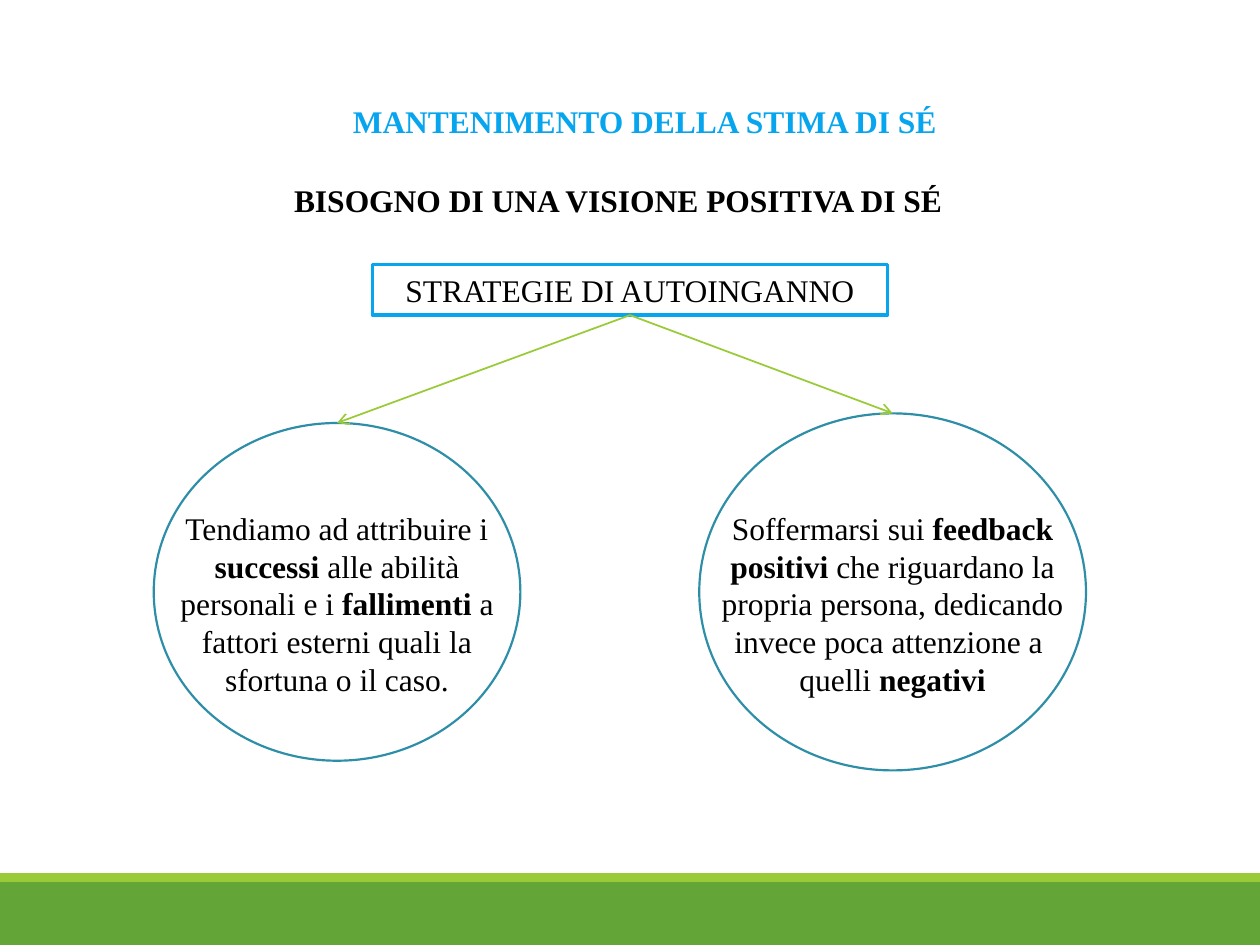
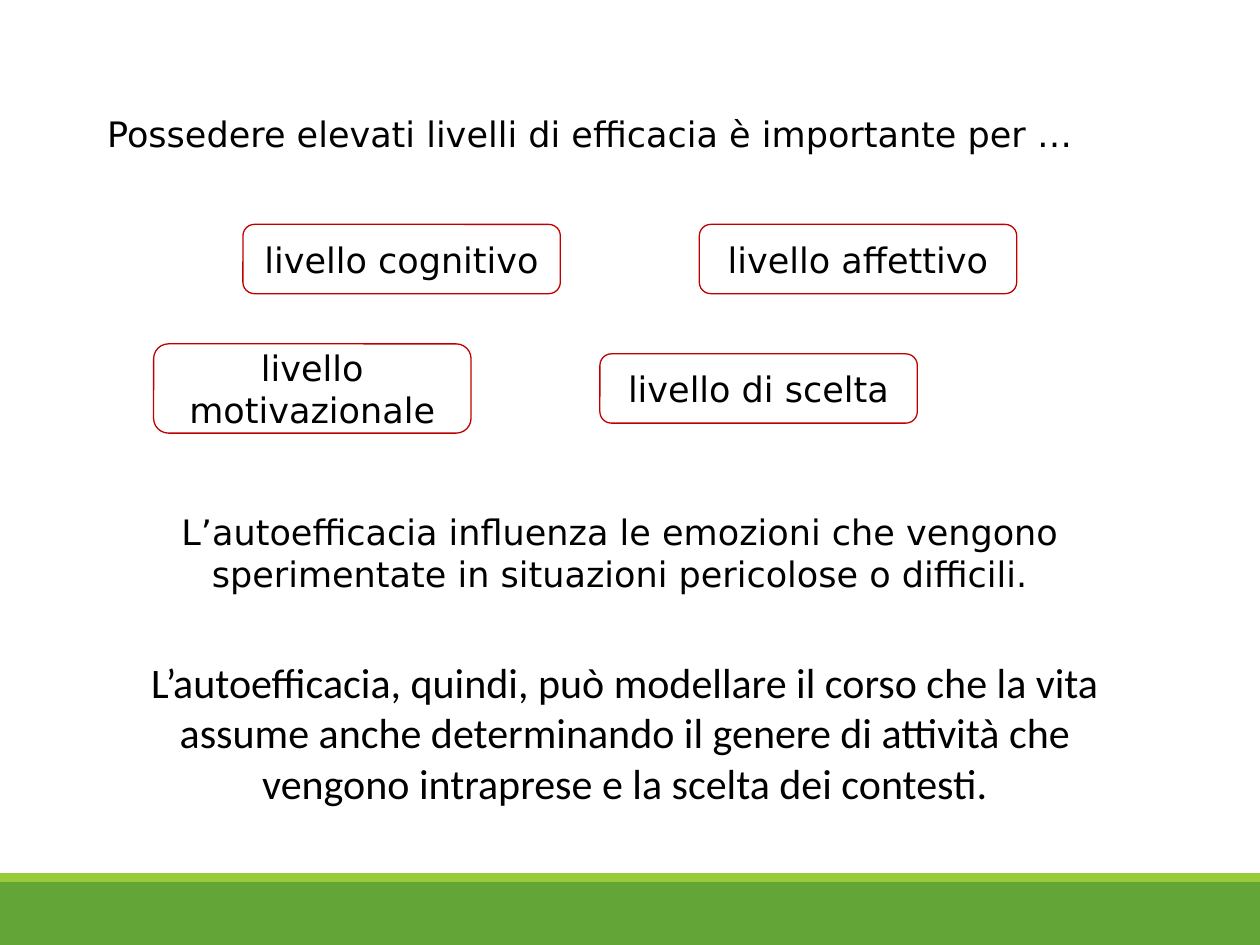
from collections import namedtuple

from lxml import etree
from pptx import Presentation
from pptx.dml.color import RGBColor
from pptx.enum.shapes import MSO_CONNECTOR, MSO_SHAPE
from pptx.enum.text import MSO_ANCHOR, MSO_AUTO_SIZE, PP_ALIGN
from pptx.oxml.ns import qn
from pptx.util import Pt

RECTANGLE, ROUNDED, OVAL = MSO_SHAPE.RECTANGLE, MSO_SHAPE.ROUNDED_RECTANGLE, MSO_SHAPE.OVAL
STRAIGHT = MSO_CONNECTOR.STRAIGHT
LEFT, CENTER = PP_ALIGN.LEFT, PP_ALIGN.CENTER
TOP, MIDDLE = MSO_ANCHOR.TOP, MSO_ANCHOR.MIDDLE
NO_AUTOFIT = MSO_AUTO_SIZE.NONE
BOTTOM_SITE, TOP_SITE = 2, 0

BLACK = RGBColor(0x00, 0x00, 0x00)
SKY = RGBColor(0x08, 0xA5, 0xEF)
TEAL = RGBColor(0x2E, 0x8E, 0xA8)
RED = RGBColor(0xC0, 0x00, 0x00)
GREEN = RGBColor(0x63, 0xA5, 0x37)
LIME = RGBColor(0x99, 0xCB, 0x38)

SERIF, SANS, BODY = "Times New Roman", "DejaVu Sans", "Calibri"
WIDTH, HEIGHT = 720, 540
BAND_TOP, BAND_SPLIT = 499, 504

# All lengths are in points
Box = namedtuple("Box", "left top width height")
Style = namedtuple("Style", "font size color bold", defaults=(BLACK, False))

ESTEEM_TITLE = Style(SERIF, 18, SKY, True)
ESTEEM_HEADING = Style(SERIF, 18, BLACK, True)
ESTEEM_TEXT = Style(SERIF, 18)
EFFICACY_TEXT = Style(SANS, 20)
EFFICACY_CLOSING = Style(BODY, 24)


def centered_box(center_x, center_y, width, height):
    return Box(center_x - width / 2, center_y - height / 2, width, height)


def lengths(box):
    return [Pt(round(value, 2)) for value in box]


def write(shape, paragraphs, style, align=CENTER, anchor=TOP, wrap=True):
    """Each paragraph is a list of (text, bold) runs."""
    frame = shape.text_frame
    frame.auto_size = NO_AUTOFIT
    frame.word_wrap = wrap
    frame.vertical_anchor = anchor
    for index, runs in enumerate(paragraphs):
        paragraph = frame.add_paragraph() if index else frame.paragraphs[0]
        paragraph.alignment = align
        for text, bold in runs:
            run = paragraph.add_run()
            run.text = text
            run.font.name = style.font
            run.font.size = Pt(style.size)
            run.font.bold = bold or style.bold
            run.font.color.rgb = style.color


def add_text(slide, box, paragraphs, style):
    write(slide.shapes.add_textbox(*lengths(box)), paragraphs, style)


def add_outline(slide, kind, box, color, line_width):
    shape = slide.shapes.add_shape(kind, *lengths(box))
    shape.shadow.inherit = False
    shape.fill.background()
    shape.line.color.rgb = color
    shape.line.width = Pt(line_width)
    return shape


def add_title(slide, box, text, style, align=CENTER, wrap=True):
    title = slide.shapes.title
    title.left, title.top, title.width, title.height = lengths(box)
    write(title, [[(text, False)]], style, align, TOP, wrap)


def add_bands(slide, layout):
    """Draw the footer bands, then move them to the shared layout."""
    for top, bottom, color in ((BAND_SPLIT, HEIGHT, GREEN), (BAND_TOP, BAND_SPLIT, LIME)):
        band = slide.shapes.add_shape(RECTANGLE, *lengths(Box(0, top, WIDTH, bottom - top)))
        band.shadow.inherit = False
        band.fill.solid()
        band.fill.fore_color.rgb = color
        band.line.fill.background()
        layout.shapes.element.append(band.element)


def add_arrow(slide, source, target):
    arrow = slide.shapes.add_connector(STRAIGHT, 0, 0, 0, 0)
    arrow.begin_connect(source, BOTTOM_SITE)
    arrow.end_connect(target, TOP_SITE)
    arrow.line.color.rgb = LIME
    arrow.line.width = Pt(1)
    properties = arrow.element.spPr
    etree.SubElement(properties.find(qn("a:ln")), qn("a:tailEnd"), type="arrow")
    etree.SubElement(properties, qn("a:effectLst"))


def add_strategy(slide, circle_box, text_width, paragraphs):
    """A circle with its text centred across it."""
    center_x = circle_box.left + circle_box.width / 2
    center_y = circle_box.top + circle_box.height / 2
    text_box = Box(center_x - text_width / 2, center_y - 51, text_width, 117)
    add_text(slide, text_box, paragraphs, ESTEEM_TEXT)
    return add_outline(slide, OVAL, circle_box, TEAL, 1.25)


def build_esteem_slide(slide):
    add_title(slide, Box(194.4, 54.7, 356, 29), "MANTENIMENTO DELLA STIMA DI SÉ",
              ESTEEM_TITLE, LEFT, wrap=False)
    add_text(slide, Box(116, 100, 474.5, 29),
             [[("BISOGNO DI UNA VISIONE POSITIVA DI SÉ", False)]], ESTEEM_HEADING)

    strategies = add_outline(slide, RECTANGLE, centered_box(360, 165.6, 294.5, 29), SKY, 2)
    write(strategies, [[("STRATEGIE DI AUTOINGANNO", False)]], ESTEEM_TEXT)

    # Two strategies, each joined to the box above
    attribution = [[("Tendiamo ad attribuire i ", False), ("successi", True),
                    (" alle abilità personali e i ", False), ("fallimenti", True),
                    (" a fattori esterni quali la sfortuna o il caso.", False)]]
    feedback = [[("Soffermarsi sui ", False), ("feedback positivi ", True),
                 ("che riguardano la propria persona, dedicando invece poca attenzione a ", False)],
                [("quelli ", False), ("negativi", True)]]
    for circle_box, text_width, paragraphs in (
            (centered_box(192.6, 338.2, 209.5, 193), 221, attribution),
            (centered_box(510.1, 338.2, 221, 204), 244, feedback)):
        circle = add_strategy(slide, circle_box, text_width, paragraphs)
        add_arrow(slide, strategies, circle)


def add_levels(slide, area):
    """Two staggered rows of rounded boxes: left, row centre, height, label."""
    levels = ((51, 20, 39.6, "livello cognitivo"), (311.8, 20, 39.6, "livello affettivo"),
              (0, 94, 51, "livello motivazionale"), (255, 94, 39.6, "livello di scelta"))
    for left, center, height, label in levels:
        box = Box(area.left + left, area.top + center - height / 2, 181.4, height)
        level = add_outline(slide, ROUNDED, box, RED, 0.75)
        write(level, [[(label, False)]], EFFICACY_TEXT, anchor=MIDDLE)


def build_efficacy_slide(slide):
    add_title(slide, Box(36.7, 60.5, 601, 31.7),
              "Possedere elevati livelli di efficacia è importante per …", EFFICACY_TEXT)
    add_levels(slide, Box(87.8, 128, 493.2, 120))
    add_text(slide, Box(70.6, 288, 567.4, 55.5),
             [[("L’autoefficacia influenza le emozioni che vengono sperimentate "
                "in situazioni pericolose o difficili.", False)]], EFFICACY_TEXT)
    add_text(slide, Box(76.3, 371.5, 561.6, 94.3),
             [[("L’autoefficacia, quindi, può modellare il corso che la vita assume anche "
                "determinando il genere di attività che vengono intraprese e la scelta "
                "dei contesti.", False)]], EFFICACY_CLOSING)


def main():
    presentation = Presentation()
    presentation.slide_width, presentation.slide_height = Pt(WIDTH), Pt(HEIGHT)
    title_only = presentation.slide_layouts[5]
    esteem_slide = presentation.slides.add_slide(title_only)
    efficacy_slide = presentation.slides.add_slide(title_only)
    add_bands(esteem_slide, title_only)
    build_esteem_slide(esteem_slide)
    build_efficacy_slide(efficacy_slide)
    presentation.save("out.pptx")


if __name__ == "__main__":
    main()
